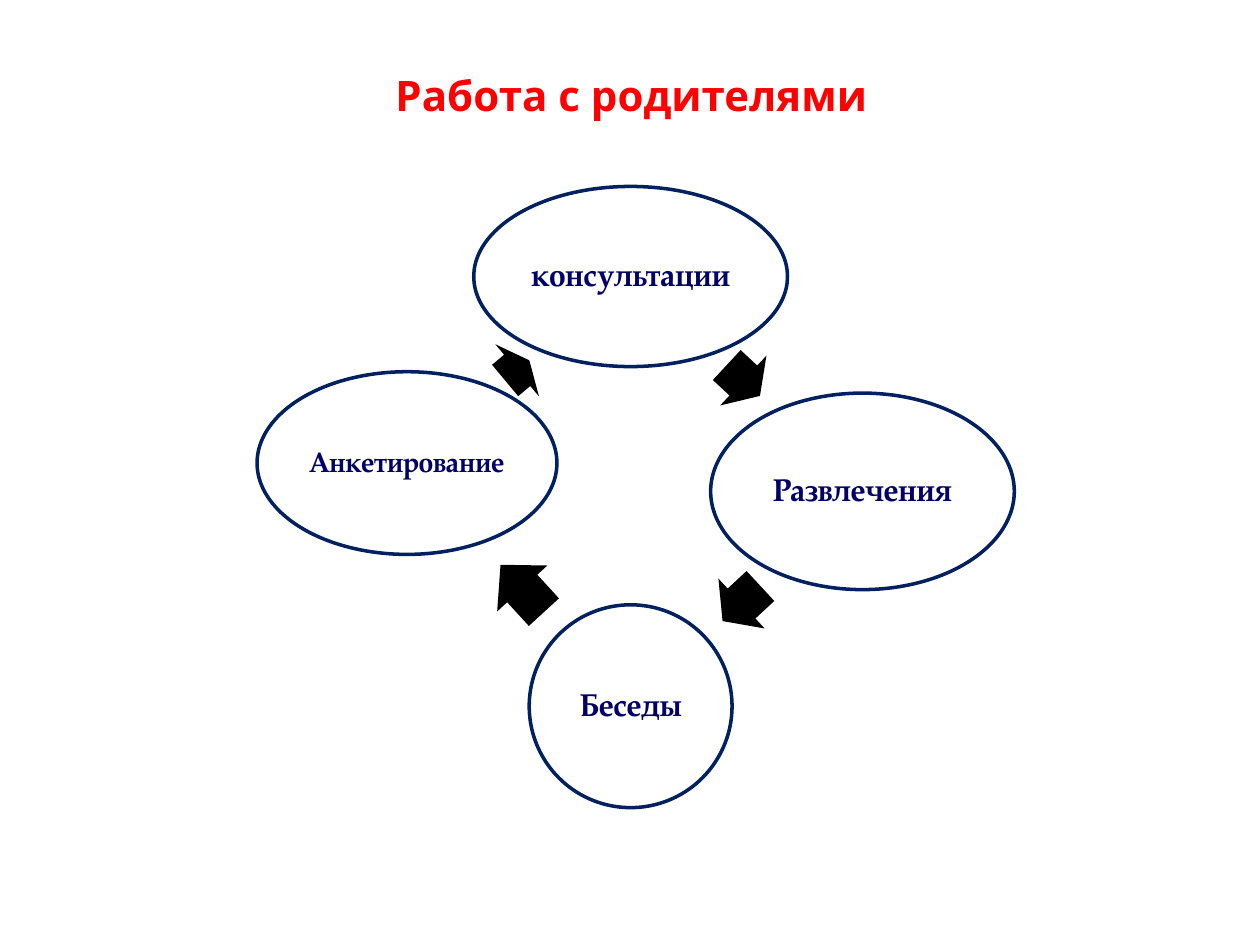
from dataclasses import dataclass

import pptx
import pptx.dml.color
import pptx.enum.shapes
import pptx.enum.text
import pptx.util

Inches = pptx.util.Inches
Pt = pptx.util.Pt
MSO_SHAPE = pptx.enum.shapes.MSO_SHAPE


@dataclass
class Stage:
    label: str
    left: float
    top: float
    width: float
    height: float
    size: int = 18
    inset: float = 0.03


@dataclass
class Arrow:
    left: float
    top: float
    width: float
    rotation: float
    height: float = 0.54


STAGES = [
    Stage("консультации", 3.76, 1.48, 2.49, 1.43),
    Stage("Развлечения", 5.64, 3.12, 2.41, 1.56),
    Stage("Беседы", 4.2, 4.8, 1.61, 1.61),
    Stage("Анкетирование", 2.04, 2.95, 2.38, 1.45, size=16, inset=0.02),
]
# Each arrow leads from the stage with the same index to the next one.
ARROWS = [
    Arrow(5.72, 2.75, 0.36, 42.8),
    Arrow(5.68, 4.52, 0.41, 137.2),
    Arrow(3.89, 4.4, 0.51, 227.5),
    Arrow(3.98, 2.67, 0.25, 320.1),
]


def rgb(value: str):
    return pptx.dml.color.RGBColor.from_string(value)


def write(sp, text: str, *, font: str, size: float, color: str,
          inset: float | None = None, spacing: float | None = None) -> None:
    """Fill a shape with one bold, centred paragraph."""
    tf = sp.text_frame
    tf.word_wrap = True
    tf.vertical_anchor = pptx.enum.text.MSO_ANCHOR.MIDDLE
    if inset is not None:
        tf.margin_left = tf.margin_right = Inches(inset)
        tf.margin_top = tf.margin_bottom = Inches(inset)
    p = tf.paragraphs[0]
    p.alignment = pptx.enum.text.PP_ALIGN.CENTER
    p.line_spacing = spacing
    r = p.add_run()
    r.text = text
    r.font.name = font
    r.font.size = Pt(size)
    r.font.bold = True
    r.font.color.rgb = rgb(color)


def add_shape(slide, kind, box: Stage | Arrow, fill: str):
    sp = slide.shapes.add_shape(kind, Inches(box.left), Inches(box.top),
                                Inches(box.width), Inches(box.height))
    sp.shadow.inherit = False
    sp.fill.solid()
    sp.fill.fore_color.rgb = rgb(fill)
    return sp


def add_stage(slide, stage: Stage) -> None:
    sp = add_shape(slide, MSO_SHAPE.OVAL, stage, "FFFFFF")
    sp.line.color.rgb = rgb("002060")
    sp.line.width = Pt(2)
    write(sp, stage.label, font="TeX Gyre Pagella", size=stage.size,
          color="000066", inset=stage.inset, spacing=0.9)


def add_arrow(slide, arrow: Arrow) -> None:
    sp = add_shape(slide, MSO_SHAPE.RIGHT_ARROW, arrow, "000000")
    sp.line.fill.background()
    sp.adjustments[0] = 0.6
    sp.adjustments[1] = 0.5
    sp.rotation = arrow.rotation


def main() -> None:
    prs = pptx.Presentation()
    prs.slide_width, prs.slide_height = Inches(10), Inches(7.5)
    slide = prs.slides.add_slide(prs.slide_layouts[5])

    title = slide.shapes.title
    title.left, title.top = Inches(0.51), Inches(0.21)
    title.width, title.height = Inches(9), Inches(1.08)
    write(title, "Работа с родителями", font="Noto Sans", size=24, color="FF0000")

    for stage, arrow in zip(STAGES, ARROWS):
        add_stage(slide, stage)
        add_arrow(slide, arrow)

    prs.save("out.pptx")


if __name__ == "__main__":
    main()
